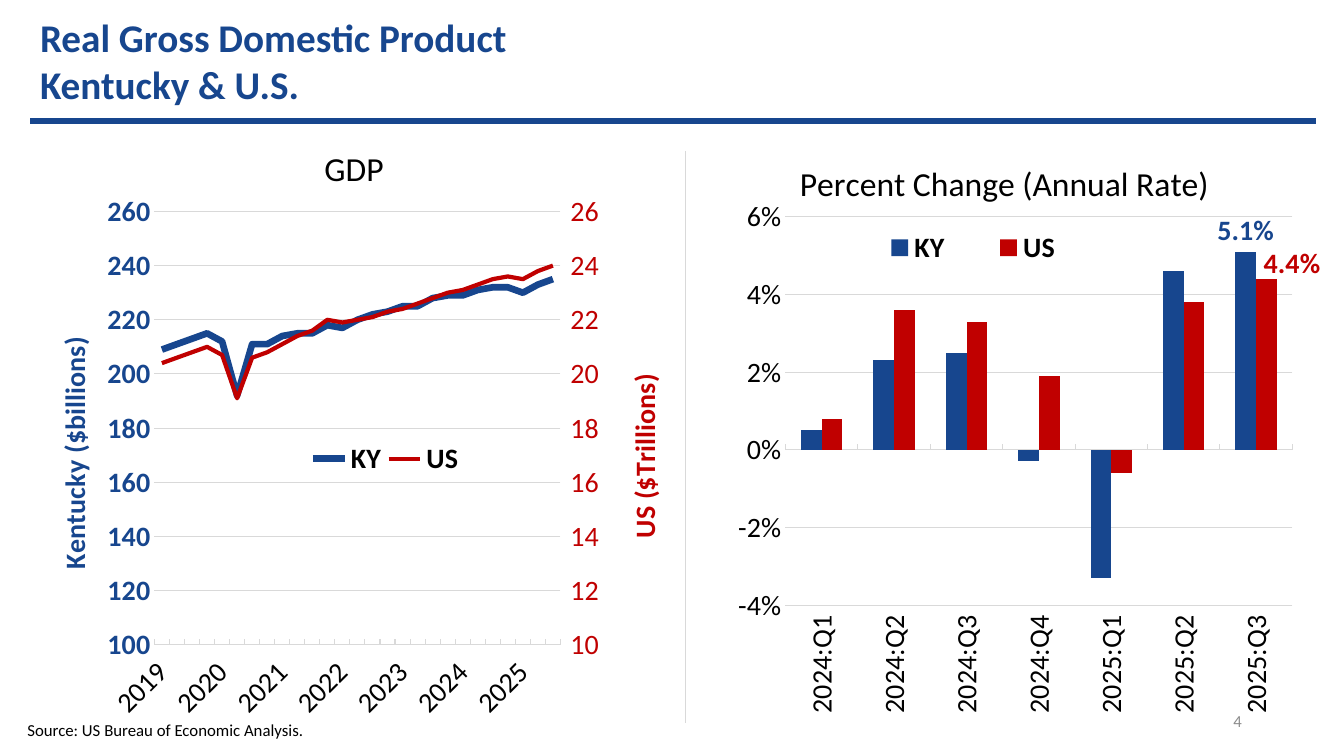
"""Build a slide comparing real GDP of Kentucky and the U.S. with two charts."""
from copy import deepcopy
from dataclasses import dataclass

from lxml.etree import SubElement
from pptx import Presentation
from pptx.chart.axis import CategoryAxis, ValueAxis
from pptx.chart.data import CategoryChartData
from pptx.dml.color import RGBColor
from pptx.enum.chart import XL_CHART_TYPE, XL_LEGEND_POSITION, XL_TICK_LABEL_POSITION, XL_TICK_MARK
from pptx.enum.shapes import MSO_CONNECTOR
from pptx.enum.text import MSO_ANCHOR, PP_ALIGN
from pptx.oxml.ns import qn
from pptx.util import Cm, Pt

BLUE = RGBColor(0x17, 0x46, 0x8E)
RED = RGBColor(0xC0, 0x00, 0x00)
BLACK = RGBColor(0x00, 0x00, 0x00)
GRAY = RGBColor(0x8C, 0x8C, 0x8C)
LIGHT_GRAY = RGBColor(0xD9, 0xD9, 0xD9)
FONT = "Calibri"

YEARS = [str(2019 + quarter // 4) for quarter in range(27)]
KY_GDP = [209, 211, 213, 215, 212, 192, 211, 211, 214, 215, 215, 218, 217, 220,
          222, 223, 225, 225, 228, 229, 229, 231, 232, 232, 230, 233, 235]
US_GDP = [20.4, 20.6, 20.8, 21, 20.7, 19.1, 20.6, 20.8, 21.1, 21.4, 21.6, 22, 21.9, 22,
          22.1, 22.3, 22.4, 22.6, 22.8, 23, 23.1, 23.3, 23.5, 23.6, 23.5, 23.8, 24]
QUARTERS = [f"{2024 + quarter // 4}:Q{quarter % 4 + 1}" for quarter in range(7)]
KY_CHANGE = [0.005, 0.023, 0.025, -0.003, -0.033, 0.046, 0.051]
US_CHANGE = [0.008, 0.036, 0.033, 0.019, -0.006, 0.038, 0.044]


@dataclass
class TextBlock:
    lines: list[str]
    place: tuple[float, float, float, float]
    size: int
    color: RGBColor
    bold: bool = False
    align: PP_ALIGN = PP_ALIGN.LEFT
    anchor: MSO_ANCHOR = MSO_ANCHOR.TOP


@dataclass
class Rule:
    start: tuple[float, float]
    end: tuple[float, float]
    color: RGBColor
    width: float


@dataclass
class ChartBlock:
    kind: XL_CHART_TYPE
    place: tuple[float, float]
    title: str
    title_spot: dict[str, float]
    plot_spot: dict[str, float]
    legend_spot: dict[str, float]
    categories: list[str]
    kentucky: list[float]
    nation: list[float]
    number_format: str
    label_angle: int


@dataclass
class Scale:
    low: float
    high: float
    step: float
    number_format: str
    color: RGBColor = BLACK
    bold: bool = False
    tick: XL_TICK_MARK = XL_TICK_MARK.NONE


TEXTS = [
    TextBlock(["4"], (23.93, 17.65, 7.62, 1.02), 12, GRAY,
              align=PP_ALIGN.RIGHT, anchor=MSO_ANCHOR.MIDDLE),
    TextBlock(["Real Gross Domestic Product", "Kentucky & U.S."],
              (0.76, 0.2, 27.64, 2.64), 28, BLUE, bold=True),
    TextBlock(["Source: US Bureau of Economic Analysis."], (0.44, 18.01, 14.61, 0.76), 12, BLACK),
]
RULES = [Rule((0.76, 3.05), (33.16, 3.05), BLUE, 4.5),
         Rule((17.27, 3.8), (17.27, 18.21), LIGHT_GRAY, 0.5)]
GDP = ChartBlock(XL_CHART_TYPE.LINE, (0.76, 3.05), "GDP", dict(x=0.45, y=0.03),
                 dict(x=0.194, y=0.146, w=0.634, h=0.699),
                 dict(x=0.43, y=0.51, w=0.25, h=0.07),
                 YEARS, KY_GDP, US_GDP, "#,##0", -45)
CHANGE = ChartBlock(XL_CHART_TYPE.COLUMN_CLUSTERED, (17.26, 3.43), "Percent Change (Annual Rate)",
                    dict(x=0.17, y=0.03), dict(x=0.157, y=0.13, w=0.791, h=0.627),
                    dict(x=0.25, y=0.15, w=0.4, h=0.06),
                    QUARTERS, KY_CHANGE, US_CHANGE, "0%", -90)


def style_font(font, size: int, color: RGBColor, bold: bool = False) -> None:
    font.name, font.size, font.bold = FONT, Pt(size), bold
    font.color.rgb = color


def add_text(page, block: TextBlock) -> None:
    box = page.shapes.add_textbox(*map(Cm, block.place))
    frame = box.text_frame
    frame.word_wrap = True
    frame.vertical_anchor = block.anchor
    frame.text = "\n".join(block.lines)
    for para in frame.paragraphs:
        para.alignment = block.align
        for span in para.runs:
            style_font(span.font, block.size, block.color, block.bold)


def add_rule(page, rule: Rule) -> None:
    line = page.shapes.add_connector(MSO_CONNECTOR.STRAIGHT, *map(Cm, rule.start + rule.end))
    line.line.color.rgb = rule.color
    line.line.width = Pt(rule.width)
    SubElement(line._element.spPr, qn("a:effectLst"))


def set_layout(element, spot: dict[str, float], edge: bool = True, inner: bool = False) -> None:
    for old in element.findall(qn("c:layout")):
        element.remove(old)
    layout = SubElement(element, qn("c:layout"))
    manual = SubElement(layout, qn("c:manualLayout"))
    settings = {"layoutTarget": "inner"} if inner else {}
    settings |= {"xMode": "edge", "yMode": "edge"} if edge else {}
    for name, value in (settings | spot).items():
        SubElement(manual, qn(f"c:{name}")).set("val", str(value))
    leaders = [qn("c:tx"), qn("c:legendPos"), qn("c:idx")]
    element.insert(sum(child.tag in leaders for child in element), layout)


def set_title(title, text: str, spot: dict[str, float], size: int,
              color: RGBColor, bold: bool, angle: int = 0) -> None:
    title.text_frame.text = text
    style_font(title.text_frame.paragraphs[0].runs[0].font, size, color, bold)
    title._element.xpath(".//a:bodyPr")[0].set("rot", str(angle * 60000))
    set_layout(title._element, spot)


def style_value_axis(axis: ValueAxis, scale: Scale) -> None:
    axis.minimum_scale, axis.maximum_scale, axis.major_unit = scale.low, scale.high, scale.step
    axis.major_tick_mark = scale.tick
    axis.format.line.fill.background()
    axis.tick_labels.number_format = scale.number_format
    axis.tick_labels.number_format_is_linked = False
    style_font(axis.tick_labels.font, 20, scale.color, scale.bold)


def add_chart(page, block: ChartBlock):
    data = CategoryChartData(number_format=block.number_format)
    data.categories = block.categories
    data.add_series("KY", block.kentucky)
    data.add_series("US", block.nation)
    frame = page.shapes.add_chart(block.kind, *map(Cm, block.place + (16.15, 15.62)), data)
    chart = frame.chart
    style_font(chart.font, 20, BLACK, True)
    chart.has_title = True
    set_title(chart.chart_title, block.title, block.title_spot, 24, BLACK, False)
    chart.has_legend = True
    chart.legend.position = XL_LEGEND_POSITION.BOTTOM
    chart.legend.include_in_layout = False
    style_font(chart.legend.font, 20, BLACK, True)
    set_layout(chart.legend._element, block.legend_spot)
    set_layout(chart._chartSpace.chart.plotArea, block.plot_spot, inner=True)
    chart.plots[0].vary_by_categories = False
    axis = chart.category_axis
    axis.major_tick_mark = XL_TICK_MARK.INSIDE
    axis.tick_label_position = XL_TICK_LABEL_POSITION.LOW
    style_font(axis.tick_labels.font, 20, BLACK)
    axis._element.xpath("./c:txPr/a:bodyPr")[0].set("rot", str(block.label_angle * 60000))
    chart.value_axis.has_major_gridlines = True
    for line in (axis.format.line, chart.value_axis.major_gridlines.format.line):
        line.color.rgb = LIGHT_GRAY
        line.width = Pt(0.75)
    return chart


def add_right_axis(chart) -> ValueAxis:
    area = chart._chartSpace.chart.plotArea
    left_plot = area.find(qn("c:lineChart"))
    right_plot = deepcopy(left_plot)
    left_plot.remove(left_plot.findall(qn("c:ser"))[1])
    right_plot.remove(right_plot.find(qn("c:ser")))
    left_plot.addnext(right_plot)
    categories, values = deepcopy(chart.category_axis._element), deepcopy(chart.value_axis._element)
    for element, own, other in ((categories, "5001", "5002"), (values, "5002", "5001")):
        element.find(qn("c:axId")).set("val", own)
        element.find(qn("c:crossAx")).set("val", other)
    for reference, number in zip(right_plot.findall(qn("c:axId")), ("5001", "5002")):
        reference.set("val", number)
    values.find(qn("c:crosses")).set("val", "max")
    values.find(qn("c:axPos")).set("val", "r")
    chart.value_axis._element.addnext(values)
    values.addnext(categories)
    CategoryAxis(categories).visible = False
    right_axis = ValueAxis(values)
    right_axis.has_major_gridlines = False
    return right_axis


def add_gdp_chart(page) -> None:
    chart = add_chart(page, GDP)
    for series, color, width in zip(chart.plots[0].series, (BLUE, RED), (4.75, 3)):
        series.smooth = False
        series.format.line.color.rgb = color
        series.format.line.width = Pt(width)
    skip = chart.category_axis._element.makeelement(qn("c:tickLblSkip"), {"val": "4"})
    chart.category_axis._element.find(qn("c:noMultiLvlLbl")).addprevious(skip)
    left_axis = chart.value_axis
    right_axis = add_right_axis(chart)
    for axis, scale, text, spot in (
            (left_axis, Scale(100, 260, 20, "#,##0", BLUE, True),
             "Kentucky ($billions)", dict(x=0.03, y=0.34)),
            (right_axis, Scale(10, 26, 2, "#,##0", RED, tick=XL_TICK_MARK.OUTSIDE),
             "US ($Trillions)", dict(x=0.92, y=0.4))):
        style_value_axis(axis, scale)
        axis.has_title = True
        set_title(axis.axis_title, text, spot, 20, scale.color, True, -90)


def add_change_chart(page) -> None:
    chart = add_chart(page, CHANGE)
    style_value_axis(chart.value_axis, Scale(-0.04, 0.06, 0.02, "0%"))
    chart.plots[0].gap_width, chart.plots[0].overlap = 150, 0
    for series, color, shift in zip(chart.plots[0].series, (BLUE, RED), (0, 0.04)):
        series.format.fill.solid()
        series.format.fill.fore_color.rgb = color
        series.invert_if_negative = False
        style_font(series.points[6].data_label.font, 20, color, True)
        series.data_labels.show_value = False
        label = series._element.xpath(".//c:dLbl")[0]
        number_format = label.makeelement(qn("c:numFmt"), {"formatCode": "0.0%", "sourceLinked": "0"})
        label.find(qn("c:idx")).addnext(number_format)
        if shift:
            set_layout(label, dict(x=shift, y=0.01), edge=False)


def main() -> None:
    deck = Presentation()
    deck.slide_width, deck.slide_height = Cm(33.87), Cm(19.05)
    page = deck.slides.add_slide(deck.slide_layouts[6])
    for block in TEXTS:
        add_text(page, block)
    for rule in RULES:
        add_rule(page, rule)
    add_gdp_chart(page)
    add_change_chart(page)
    deck.save("out.pptx")


if __name__ == "__main__":
    main()
